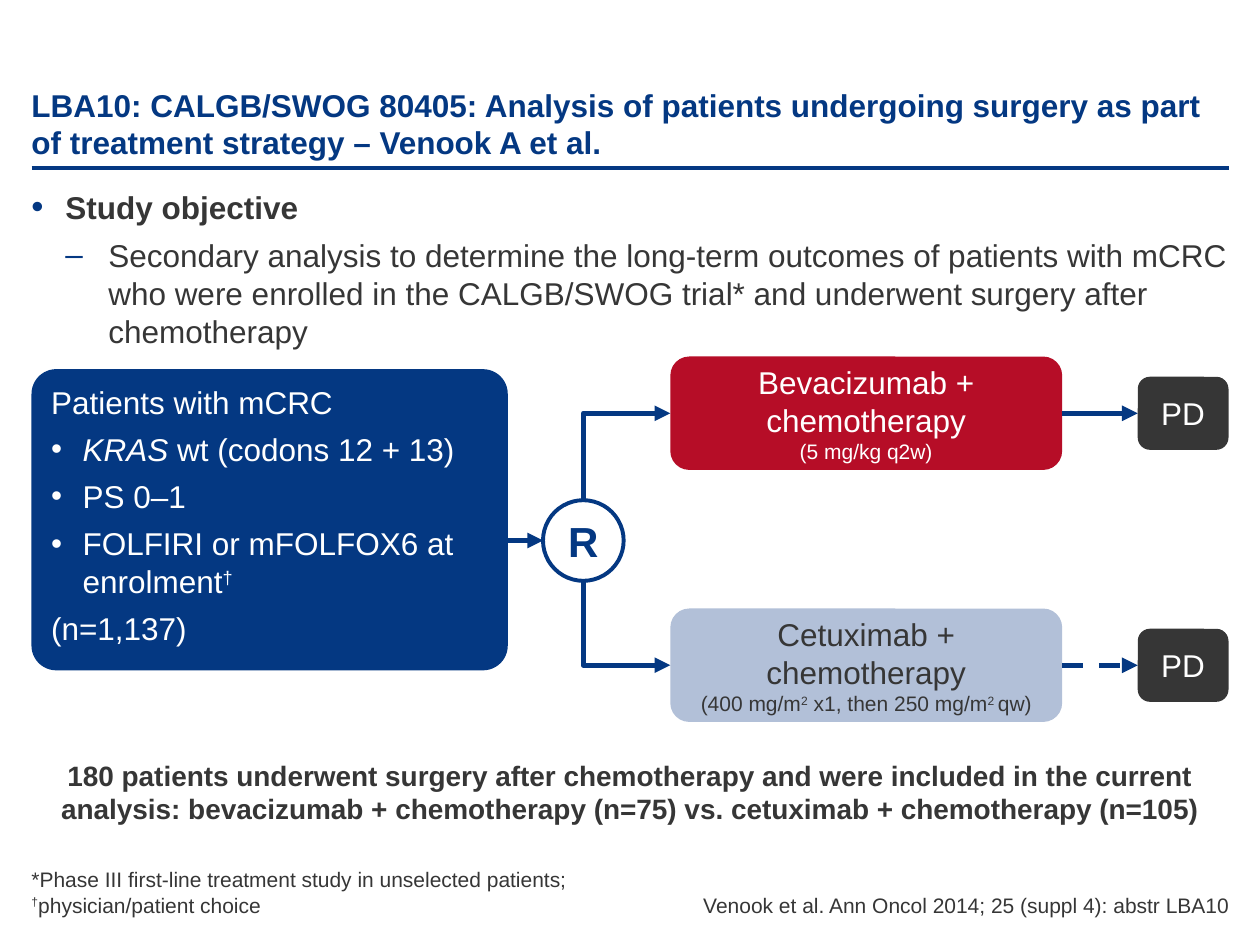
from dataclasses import dataclass

from lxml.etree import SubElement
from pptx import Presentation
from pptx.dml.color import RGBColor
from pptx.enum.dml import MSO_LINE
from pptx.enum.shapes import MSO_CONNECTOR, MSO_SHAPE
from pptx.enum.text import MSO_ANCHOR, PP_ALIGN
from pptx.oxml.ns import qn
from pptx.util import Inches, Pt


@dataclass(frozen=True)
class Theme:
    font: str = "Arial"
    navy: str = "043882"
    red: str = "B60D27"
    pale: str = "B2C0D8"
    dark: str = "363636"
    white: str = "FFFFFF"
    main: int = 18
    note: int = 12
    summary: int = 16
    randomise: int = 24
    rule: float = 2.25
    arrow: float = 3


@dataclass
class Para:
    """A paragraph: runs are strings or (string, format) pairs; '\\n' breaks the line."""
    runs: list
    bullet: str = ""
    bullet_color: str = ""
    bullet_size: int = 100
    left: float = 0
    hanging: float = 0
    after: float = 0
    level: int = 0


THEME = Theme()
SUPER = {"superscript": True}
SMALL = {"size": THEME.note}


def rgb(value):
    return RGBColor.from_string(value)


def add_bullet(props, para):
    if para.bullet_color:
        color = SubElement(props, qn("a:buClr"))
        SubElement(color, qn("a:srgbClr"), val=para.bullet_color)
    SubElement(props, qn("a:buSzPct"), val=str(para.bullet_size * 1000))
    SubElement(props, qn("a:buFont"), typeface=THEME.font)
    SubElement(props, qn("a:buChar"), char=para.bullet)


def add_run(paragraph, text, size=THEME.main, color=THEME.dark, bold=False,
            italic=False, superscript=False):
    run = paragraph.add_run()
    run.text = text
    font = run.font
    font.name, font.size, font.bold, font.italic = THEME.font, Pt(size), bold, italic
    font.color.rgb = rgb(color)
    if superscript:
        run._r.get_or_add_rPr().set("baseline", "30000")


def write(shape, content, align=PP_ALIGN.LEFT, anchor=MSO_ANCHOR.TOP,
          insets=(0.1, 0.05, 0.1, 0.05), wrap=True, **run_format):
    frame = shape.text_frame
    frame.word_wrap, frame.vertical_anchor = wrap, anchor
    (frame.margin_left, frame.margin_top,
     frame.margin_right, frame.margin_bottom) = map(Inches, insets)
    paras = [Para([content])] if isinstance(content, str) else content
    for index, para in enumerate(paras):
        paragraph = frame.add_paragraph() if index else frame.paragraphs[0]
        paragraph.alignment, paragraph.level = align, para.level
        paragraph.space_after = Pt(para.after)
        props = paragraph._p.get_or_add_pPr()
        props.set("marL", str(Inches(para.left)))
        props.set("indent", str(Inches(-para.hanging)))
        if para.bullet:
            add_bullet(props, para)
        for part in para.runs:
            text, override = (part, {}) if isinstance(part, str) else part
            if text == "\n":
                paragraph.add_line_break()
            else:
                add_run(paragraph, text, **{**run_format, **override})


class SlideBuilder:
    def __init__(self, slide, theme):
        self.shapes, self.theme = slide.shapes, theme

    def text(self, box, content, **text_format):
        write(self.shapes.add_textbox(*map(Inches, box)), content, **text_format)

    def block(self, box, content, fill=None, outline=None, kind=MSO_SHAPE.ROUNDED_RECTANGLE,
              corner=None, **text_format):
        shape = self.shapes.add_shape(kind, *map(Inches, box))
        shape.shadow.inherit = False
        if corner:
            shape.adjustments[0] = corner
        if fill:
            shape.fill.solid()
            shape.fill.fore_color.rgb = rgb(fill)
        else:
            shape.fill.background()
        if outline:
            shape.line.color.rgb = rgb(outline)
            shape.line.width = Pt(self.theme.rule)
        else:
            shape.line.fill.background()
        write(shape, content, **text_format)
        return shape

    def node(self, box, content, fill, color=THEME.white):
        return self.block(box, content, fill, corner=0.167, color=color,
                          align=PP_ALIGN.CENTER, anchor=MSO_ANCHOR.MIDDLE,
                          insets=(0.1, 0, 0.1, 0))

    def line(self, start, end, width=THEME.arrow, arrow="tailEnd", dashed=False,
             kind=MSO_CONNECTOR.STRAIGHT):
        connector = self.shapes.add_connector(kind, *map(Inches, (*start, *end)))
        connector.line.color.rgb = rgb(self.theme.navy)
        connector.line.width = Pt(width)
        if dashed:
            connector.line.dash_style = MSO_LINE.DASH
        if arrow:
            SubElement(connector.line._get_or_add_ln(), qn("a:" + arrow), type="triangle")
        SubElement(connector._element.spPr, qn("a:effectLst"))
        return connector

    def elbow(self, arm_side, circle_edge):
        """One-bend connector whose arrowhead points at the treatment arm."""
        connector = self.line(arm_side, circle_edge, arrow="headEnd", kind=MSO_CONNECTOR.ELBOW)
        connector._element.spPr.find(qn("a:prstGeom")).set("prst", "bentConnector2")


def add_header(builder):
    builder.line((0.25, 1.33), (9.75, 1.33), width=THEME.rule, arrow=None)
    builder.text((0.25, 0.25, 9.5, 1.03),
                 "LBA10: CALGB/SWOG 80405: Analysis of patients undergoing surgery as part "
                 "of treatment strategy – Venook A et al.",
                 anchor=MSO_ANCHOR.BOTTOM, insets=(0, 0.05, 0, 0), color=THEME.navy, bold=True)
    builder.text((0.25, 1.44, 9.5, 1.4), [
        Para([("Study objective", {"bold": True})], "•", THEME.navy, 110, 0.27, 0.27, 6),
        Para(["Secondary analysis to determine the long-term outcomes of patients with mCRC "
              "who were enrolled in the CALGB/SWOG trial* and underwent surgery after "
              "chemotherapy"], "–", THEME.navy, 100, 0.61, 0.34, 6, 1),
    ], insets=(0, 0.05, 0, 0.05))


def add_trial_design(builder):
    gap = 0.3 * THEME.main
    criteria = [["KRAS ", "wt (codons 12 + 13)"], ["PS 0–1"],
                ["FOLFIRI or mFOLFOX6 at enrolment", ("†", SUPER)]]
    criteria[0][0] = ("KRAS ", {"italic": True})
    builder.block((0.25, 2.93, 3.78, 2.39), [
        Para(["Patients with mCRC"], after=gap),
        *(Para(runs, "•", left=0.25, hanging=0.25, after=gap) for runs in criteria),
        Para(["(n=1,137)"], left=0.32, hanging=0.32, after=gap),
    ], THEME.navy, corner=0.082, color=THEME.white)

    center_x, center_y, radius = 4.63, 4.29, 0.32
    builder.block((center_x - radius, center_y - radius, 2 * radius, 2 * radius), "R",
                  outline=THEME.navy, kind=MSO_SHAPE.OVAL, align=PP_ALIGN.CENTER,
                  anchor=MSO_ANCHOR.MIDDLE, wrap=False, size=THEME.randomise,
                  color=THEME.navy, bold=True)
    builder.line((4.03, center_y), (center_x - radius, center_y))

    bevacizumab = [Para(["Bevacizumab + chemotherapy", "\n", ("(5 mg/kg q2w)", SMALL)])]
    cetuximab = [Para(["Cetuximab + chemotherapy"]),
                 Para([("(400 mg/m", SMALL), ("2", SMALL | SUPER),
                       (" x1, then 250 mg/m", SMALL), ("2 ", SMALL | SUPER), ("qw)", SMALL)])]
    arms = [(3.28, -radius, bevacizumab, THEME.red, THEME.white, False),
            (5.28, radius, cetuximab, THEME.pale, THEME.dark, True)]
    for y, edge, treatment, fill, color, dashed in arms:
        arm = builder.node((5.32, y - 0.45, 3.11, 0.9), treatment, fill, color)
        progression = builder.node((9.03, y - 0.29, 0.72, 0.58), "PD", THEME.dark)
        builder.elbow((5.32, y), (center_x, center_y + edge))
        follow_up = builder.line((8.43, y), (9.03, y), dashed=dashed)
        follow_up.begin_connect(arm, 3)
        follow_up.end_connect(progression, 1)


def add_footer(builder):
    builder.text((0.33, 5.97, 9.34, 0.64),
                 "180 patients underwent surgery after chemotherapy and were included in the "
                 "current analysis: bevacizumab + chemotherapy (n=75) vs. cetuximab + "
                 "chemotherapy (n=105)",
                 align=PP_ALIGN.CENTER, size=THEME.summary, bold=True)
    note = {"anchor": MSO_ANCHOR.BOTTOM, "insets": (0, 0, 0, 0), "size": THEME.note}
    builder.text((0.25, 6.88, 5.03, 0.4), [
        Para(["*Phase III first-line treatment study in unselected patients; ",
              ("†", SUPER), "physician/patient choice"])], **note)
    builder.text((5.45, 7.08, 4.31, 0.2),
                 "Venook et al. Ann Oncol 2014; 25 (suppl 4): abstr LBA10",
                 align=PP_ALIGN.RIGHT, wrap=False, **note)


def main():
    deck = Presentation()
    deck.slide_width, deck.slide_height = Inches(10), Inches(7.5)
    builder = SlideBuilder(deck.slides.add_slide(deck.slide_layouts[6]), THEME)
    add_header(builder)
    add_trial_design(builder)
    add_footer(builder)
    deck.save("out.pptx")


if __name__ == "__main__":
    main()
